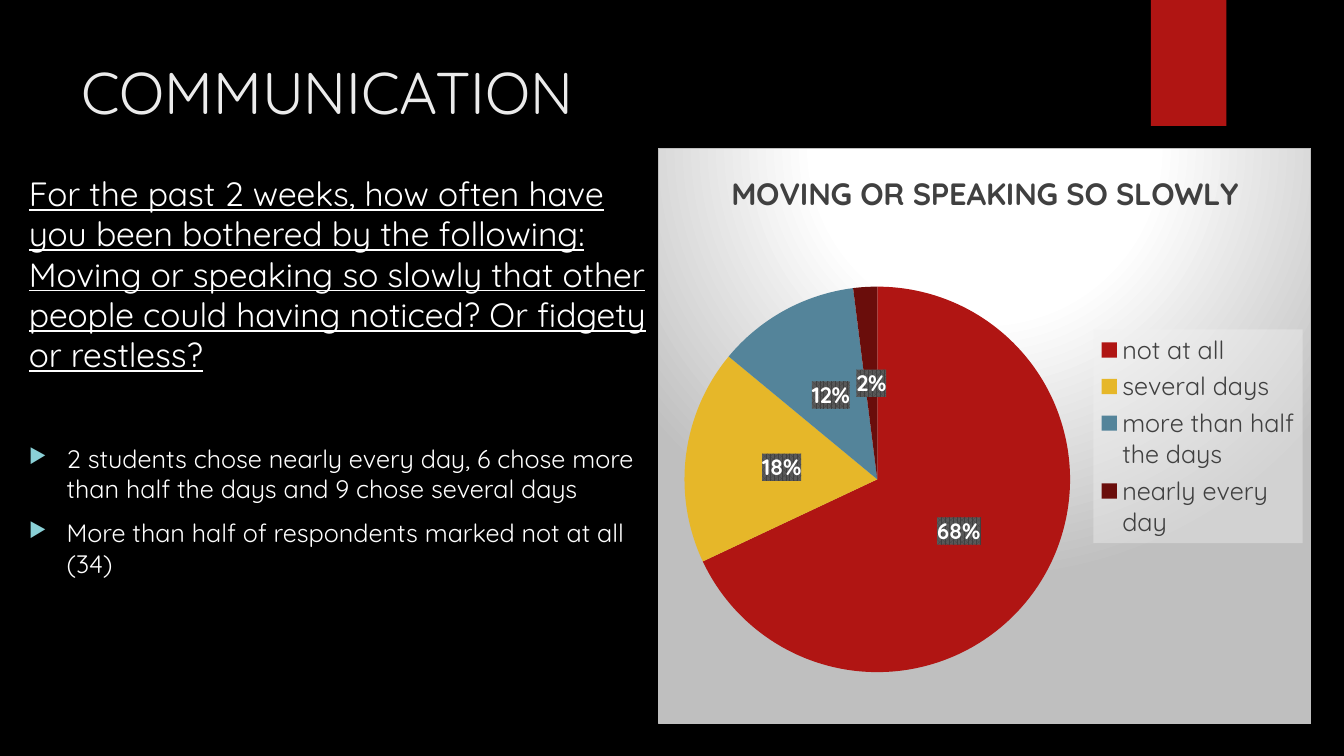
from dataclasses import dataclass
from typing import NamedTuple

from pptx import Presentation
from pptx.chart.chart import Chart
from pptx.chart.data import CategoryChartData
from pptx.dml.color import RGBColor
from pptx.enum.chart import XL_CHART_TYPE, XL_LABEL_POSITION, XL_LEGEND_POSITION
from pptx.enum.shapes import MSO_SHAPE
from pptx.oxml import parse_xml
from pptx.oxml.ns import nsdecls
from pptx.slide import Slide
from pptx.util import Pt

PX = 9525
FONT = "Quicksand"
BLACK = RGBColor(0x00, 0x00, 0x00)
WHITE = RGBColor(0xFF, 0xFF, 0xFF)
PALE = RGBColor(0xEB, 0xEB, 0xEB)
RED = RGBColor(0xB0, 0x15, 0x13)
GOLD = RGBColor(0xE6, 0xB7, 0x29)
BLUE = RGBColor(0x54, 0x84, 0x9A)
WINE = RGBColor(0x6A, 0x0D, 0x0B)
AQUA = RGBColor(0x8A, 0xD0, 0xD6)
DARK = RGBColor(0x40, 0x40, 0x40)
SLATE = RGBColor(0x59, 0x59, 0x59)
MIST = RGBColor(0xF2, 0xF2, 0xF2)
GREY = RGBColor(0xBF, 0xBF, 0xBF)
NAME = "MOVING OR SPEAKING SO SLOWLY"


class Box(NamedTuple):
    left: int
    top: int
    width: int
    height: int

    def emu(self) -> list[int]:
        return [side * PX for side in self]


@dataclass
class Para:
    text: str
    size: int
    color: RGBColor = WHITE
    gap: int = 0
    under: bool = False
    bullet: bool = False


@dataclass
class Slice:
    label: str
    value: int
    color: RGBColor


TITLE = [Para("COMMUNICATION", 42, PALE)]
BODY = [
    Para("For the past 2 weeks, how often have you been bothered by the following: "
         "Moving or speaking so slowly that other people could having noticed? "
         "Or fidgety or restless?", 24, under=True),
    Para("2 students chose nearly every day, 6 chose more than half the days "
         "and 9 chose several days", 18, gap=49, bullet=True),
    Para("More than half of respondents marked not at all (34)", 18, gap=10, bullet=True),
]
SLICES = [
    Slice("not at all", 68, RED),
    Slice("several days", 18, GOLD),
    Slice("more than half the days", 12, BLUE),
    Slice("nearly every day", 2, WINE),
]


def style(font, size: int, color: RGBColor, bold: bool = False) -> None:
    font.name = FONT
    font.size = Pt(size)
    font.bold = bold
    font.color.rgb = color


def solid(color: RGBColor, alpha: int = 100) -> str:
    return (f'<a:solidFill><a:srgbClr val="{color}"><a:alpha val="{alpha * 1000}"/>'
            '</a:srgbClr></a:solidFill>')


def paint(inner: str):
    return parse_xml(f'<c:spPr {nsdecls("c", "a")}>{inner}</c:spPr>')


def layout(x: float, y: float, w: float, h: float):
    return parse_xml(
        f'<c:layout {nsdecls("c")}><c:manualLayout><c:layoutTarget val="inner"/>'
        '<c:xMode val="edge"/><c:yMode val="edge"/>'
        f'<c:x val="{x}"/><c:y val="{y}"/><c:w val="{w}"/><c:h val="{h}"/>'
        '</c:manualLayout></c:layout>')


def write(slide: Slide, box: Box, paras: list[Para]) -> None:
    frame = slide.shapes.add_textbox(*box.emu()).text_frame
    frame.word_wrap = True
    for rank, para in enumerate(paras):
        line = frame.add_paragraph() if rank else frame.paragraphs[0]
        line.text = para.text
        if para.gap:
            line.space_before = Pt(para.gap)
        if para.bullet:
            props = line._p.get_or_add_pPr()
            props.set("marL", str(36 * PX))
            props.set("indent", str(-36 * PX))
            for mark in (f'<a:buClr {nsdecls("a")}><a:srgbClr val="{AQUA}"/></a:buClr>',
                         f'<a:buSzPct {nsdecls("a")} val="80000"/>',
                         f'<a:buChar {nsdecls("a")} char="▶"/>'):
                props.append(parse_xml(mark))
        font = line.runs[0].font
        style(font, para.size, para.color)
        font.underline = para.under


def add_bar(slide: Slide, box: Box) -> None:
    bar = slide.shapes.add_shape(MSO_SHAPE.RECTANGLE, *box.emu())
    bar.shadow.inherit = False
    bar.fill.solid()
    bar.fill.fore_color.rgb = RED
    bar.line.fill.background()


def add_pie(slide: Slide, box: Box) -> Chart:
    data = CategoryChartData()
    data.categories = [part.label for part in SLICES]
    data.add_series(NAME, [part.value for part in SLICES])
    chart = slide.shapes.add_chart(XL_CHART_TYPE.PIE, *box.emu(), data).chart
    style(chart.font, 10, WHITE)
    chart.has_title = True
    head = chart.chart_title
    head.include_in_layout = False
    head.text_frame.text = NAME
    style(head.text_frame.paragraphs[0].runs[0].font, 22, DARK, True)

    plot = chart.plots[0]
    plot.vary_by_categories = True
    series = plot.series[0]
    for rank, part in enumerate(SLICES):
        look = series.points[rank].format
        look.fill.solid()
        look.fill.fore_color.rgb = part.color
        look.line.fill.background()

    tags = series.data_labels
    tags.show_percentage = True
    tags.show_value = False
    tags.number_format = "0%"
    tags.number_format_is_linked = False
    tags.position = XL_LABEL_POSITION.CENTER
    style(tags.font, 16, WHITE, True)
    weave = (f'<a:pattFill prst="pct75"><a:fgClr><a:srgbClr val="{DARK}"/></a:fgClr>'
             f'<a:bgClr><a:srgbClr val="{SLATE}"/></a:bgClr></a:pattFill>')
    tags._element.txPr.addprevious(paint(weave))

    chart.has_legend = True
    key = chart.legend
    key.position = XL_LEGEND_POSITION.RIGHT
    key.include_in_layout = False
    style(key.font, 18, DARK)
    key._element.txPr.addprevious(paint(solid(MIST, 39)))
    return chart


def finish(chart: Chart) -> None:
    root = chart._chartSpace
    area = root.chart.plotArea
    for old in area.xpath("c:layout"):
        area.remove(old)
    area.insert(0, layout(0.03, 0.24, 0.61, 0.67))
    stops = "".join(
        f'<a:gs pos="{at * 1000}"><a:srgbClr val="{color}"/></a:gs>'
        for at, color in ((0, WHITE), (39, WHITE), (100, GREY)))
    glow = (f'<a:gradFill><a:gsLst>{stops}</a:gsLst><a:path path="circle">'
            '<a:fillToRect l="50000" t="-80000" r="50000" b="180000"/></a:path></a:gradFill>')
    root.xpath("c:txPr")[0].addprevious(paint(f'{glow}<a:ln w="{PX}">{solid(GREY)}</a:ln>'))


def main() -> None:
    deck = Presentation()
    deck.slide_width, deck.slide_height = 1280 * PX, 720 * PX
    slide = deck.slides.add_slide(deck.slide_layouts[6])
    slide.background.fill.solid()
    slide.background.fill.fore_color.rgb = BLACK
    add_bar(slide, Box(1096, 0, 72, 120))
    write(slide, Box(68, 48, 988, 147), TITLE)
    write(slide, Box(18, 160, 622, 530), BODY)
    finish(add_pie(slide, Box(627, 141, 622, 549)))
    deck.save("out.pptx")


if __name__ == "__main__":
    main()
